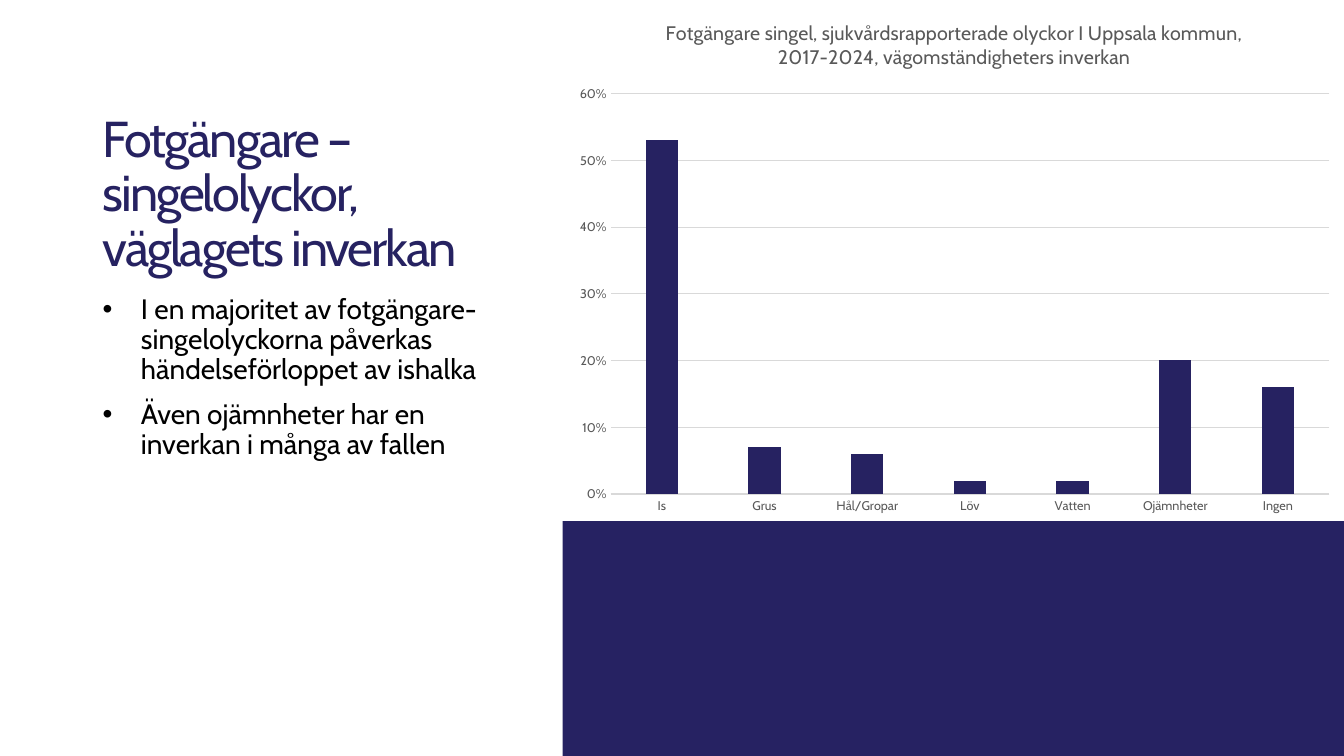
from lxml import etree
from pptx import Presentation
from pptx.chart.data import CategoryChartData
from pptx.dml.color import RGBColor
from pptx.enum.chart import XL_CHART_TYPE, XL_TICK_MARK
from pptx.enum.shapes import MSO_SHAPE
from pptx.enum.text import MSO_ANCHOR
from pptx.oxml import parse_xml
from pptx.oxml.ns import nsdecls, qn
from pptx.util import Inches, Pt

NAVY_PANEL = RGBColor(0x26, 0x22, 0x62)
NAVY = RGBColor(0x26, 0x22, 0x61)
BLACK = RGBColor(0, 0, 0)
AXIS_GRAY = RGBColor(0x59, 0x59, 0x59)
GRID_GRAY = RGBColor(0xD9, 0xD9, 0xD9)
COLUMNS = XL_CHART_TYPE.COLUMN_CLUSTERED
NO_TICK = XL_TICK_MARK.NONE
RECTANGLE = MSO_SHAPE.RECTANGLE
TOP, BOTTOM = MSO_ANCHOR.TOP, MSO_ANCHOR.BOTTOM

CAUSES = {"Is": 0.53, "Grus": 0.07, "Hål/Gropar": 0.06, "Löv": 0.02,
          "Vatten": 0.02, "Ojämnheter": 0.2, "Ingen": 0.16}


class SlideBuilder:
    """Holds the font and the current slide."""

    def __init__(self, page, font_name="Cabin"):
        self.page = page
        self.font_name = font_name

    def style(self, font, size, color):
        font.name = self.font_name
        font.size = Pt(size)
        font.color.rgb = color
        font.bold = False

    def panel(self, left, top, width, height, color):
        box = self.page.shapes.add_shape(
            RECTANGLE, Inches(left), Inches(top), Inches(width), Inches(height))
        box.shadow.inherit = False
        box.fill.solid()
        box.fill.fore_color.rgb = color
        box.line.fill.background()

    def text(self, left, top, width, height, lines, size, color,
             anchor=TOP, bullets=False, tracking=0):
        box = self.page.shapes.add_textbox(
            Inches(left), Inches(top), Inches(width), Inches(height))
        frame = box.text_frame
        frame.word_wrap = True
        frame.vertical_anchor = anchor
        for index, line in enumerate(lines):
            para = frame.paragraphs[0] if index == 0 else frame.add_paragraph()
            if bullets:
                properties = para._p.get_or_add_pPr()
                properties.set("marL", str(Inches(0.38)))
                properties.set("indent", str(-Inches(0.38)))
                etree.SubElement(properties, qn("a:buFont"), typeface="Arial")
                etree.SubElement(properties, qn("a:buChar"), char="•")
            para.line_spacing = 0.9
            if index:
                para.space_before = Pt(10)
            span = para.add_run()
            span.text = line
            self.style(span.font, size, color)
            if tracking:
                span.font._element.set("spc", str(int(tracking * 100)))

    def column_chart(self, left, top, width, height, title, values, color):
        data = CategoryChartData(number_format="0%")
        data.categories = list(values)
        data.add_series("Series 1", list(values.values()))
        chart = self.page.shapes.add_chart(
            COLUMNS, Inches(left), Inches(top), Inches(width), Inches(height),
            data).chart
        self.style(chart.font, 10, BLACK)
        chart.has_legend = False

        # Chart title
        chart.has_title = True
        span = chart.chart_title.text_frame.paragraphs[0].add_run()
        span.text = title
        self.style(span.font, 14, AXIS_GRAY)
        chart.chart_title.include_in_layout = False

        # Columns
        plot = chart.plots[0]
        plot.vary_by_categories = False
        plot.gap_width = 219
        plot.overlap = -27
        fill = plot.series[0].format.fill
        fill.solid()
        fill.fore_color.rgb = color

        # Axes and gridlines
        for axis in (chart.category_axis, chart.value_axis):
            axis.major_tick_mark = axis.minor_tick_mark = NO_TICK
            self.style(axis.tick_labels.font, 9, AXIS_GRAY)
        scale = chart.value_axis
        scale.minimum_scale, scale.maximum_scale = 0, 0.6
        scale.major_unit = 0.1
        scale.tick_labels.number_format = "0%"
        scale.tick_labels.number_format_is_linked = False
        scale.format.line.fill.background()
        scale.has_major_gridlines = True
        for line in (chart.category_axis.format.line,
                     scale.major_gridlines.format.line):
            line.color.rgb = GRID_GRAY
            line.width = Pt(0.75)
        self.place_plot(chart, x=0.06, y=0.18, w=0.92, h=0.77)

    def place_plot(self, chart, **fractions):
        area = chart._chartSpace.chart.plotArea
        for old in area.findall(qn("c:layout")):
            area.remove(old)
        sizes = "".join(f'<c:{key} val="{value}"/>'
                        for key, value in fractions.items())
        area.insert(0, parse_xml(
            f'<c:layout {nsdecls("c")}><c:manualLayout>'
            '<c:layoutTarget val="inner"/><c:xMode val="edge"/>'
            f'<c:yMode val="edge"/>{sizes}</c:manualLayout></c:layout>'))


def main():
    deck = Presentation()
    deck.slide_width, deck.slide_height = Inches(13.33), Inches(7.5)
    builder = SlideBuilder(deck.slides.add_slide(deck.slide_layouts[6]))

    # Panel below the chart
    builder.panel(5.58, 5.17, 7.75, 2.33, NAVY_PANEL)

    # Heading and findings
    builder.text(0.92, 1.23, 4.19, 1.57,
                 ["Fotgängare – singelolyckor, väglagets inverkan"],
                 36, NAVY, anchor=BOTTOM, tracking=-1.5)
    builder.text(0.92, 2.88, 4.19, 3.87,
                 ["I en majoritet av fotgängare-singelolyckorna påverkas "
                  "händelseförloppet av ishalka",
                  "Även ojämnheter har en inverkan i många av fallen"],
                 20, BLACK, bullets=True)

    # Share of accidents by road condition
    builder.column_chart(5.59, 0, 7.75, 5.16,
                         "Fotgängare singel, sjukvårdsrapporterade olyckor I "
                         "Uppsala kommun, 2017-2024, vägomständigheters inverkan",
                         CAUSES, NAVY)

    deck.save("out.pptx")


if __name__ == "__main__":
    main()
